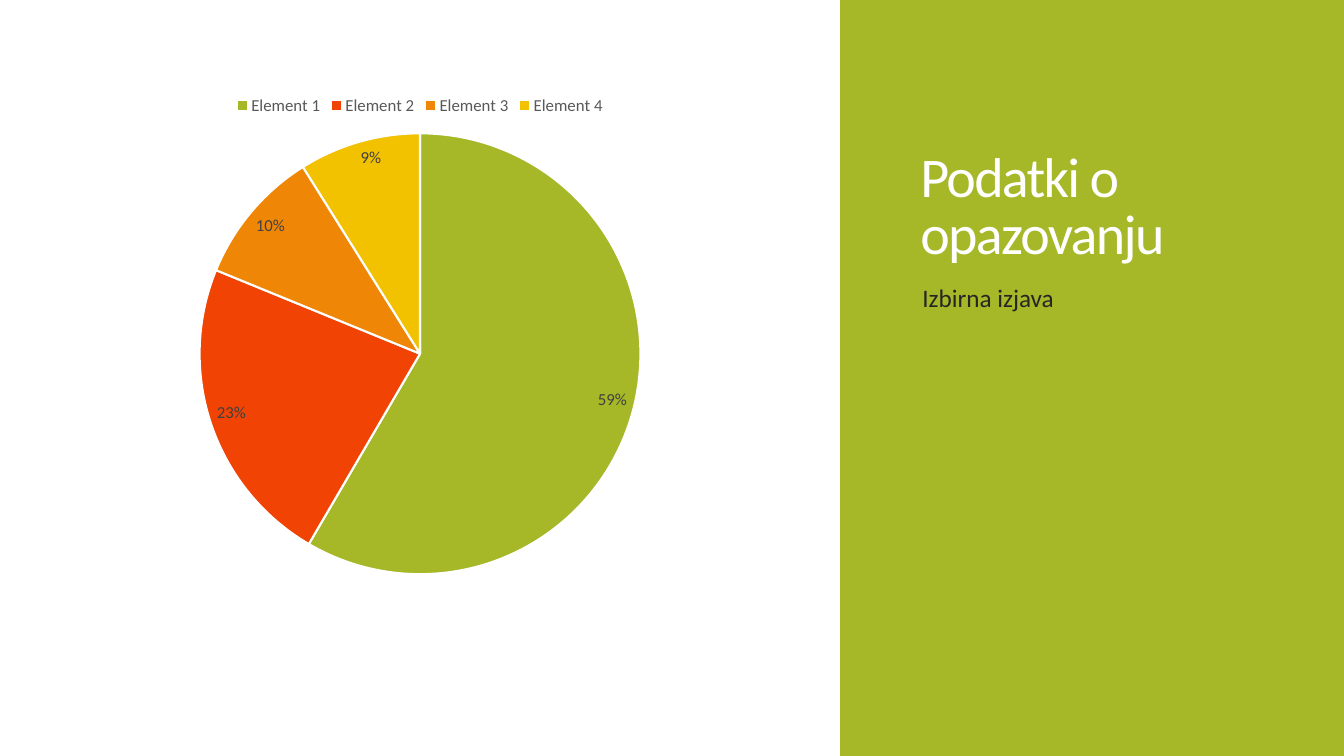
from pptx import Presentation
from pptx.chart.data import CategoryChartData
from pptx.dml.color import RGBColor
from pptx.enum.chart import XL_CHART_TYPE as ChartType
from pptx.enum.chart import XL_LABEL_POSITION as LabelPosition
from pptx.enum.chart import XL_LEGEND_POSITION as LegendPosition
from pptx.enum.shapes import MSO_SHAPE as Shape
from pptx.enum.text import MSO_ANCHOR as Anchor
from pptx.enum.text import MSO_AUTO_SIZE as AutoSize
from pptx.enum.text import PP_ALIGN as Align
from pptx.util import Cm, Pt

# Content
TITLE = "Podatki o opazovanju"
STATEMENT = "Izbirna izjava"
SERIES_NAME = "Series 1"
SHARES = {"Element 1": 59, "Element 2": 23, "Element 3": 10, "Element 4": 9}

# Style
FONT = "Calibri"
WHITE = RGBColor(0xFF, 0xFF, 0xFF)
GREEN = RGBColor(0xA6, 0xB7, 0x27)
RED = RGBColor(0xF0, 0x43, 0x04)
ORANGE = RGBColor(0xEF, 0x86, 0x06)
YELLOW = RGBColor(0xF2, 0xC1, 0x00)
STATEMENT_COLOR = RGBColor(0x26, 0x26, 0x26)
LABEL_COLOR = RGBColor(0x40, 0x40, 0x40)
LEGEND_COLOR = RGBColor(0x59, 0x59, 0x59)
SLICE_COLORS = [GREEN, RED, ORANGE, YELLOW]

# Layout: left, top, width, height
SLIDE_WIDTH, SLIDE_HEIGHT = Cm(33.87), Cm(19.05)
PANEL_WIDTH = Cm(12.7)
TITLE_BOX = (Cm(22.94), Cm(1.5), Cm(9.4), Cm(5.33))
STATEMENT_BOX = (Cm(22.99), Cm(6.99), Cm(9.45), Cm(8.69))
CHART_BOX = (Cm(2.12), Cm(2.12), Cm(16.93), Cm(12.7))


def format_font(font, size, color):
    font.name = FONT
    font.size = Pt(size)
    font.bold = False
    font.color.rgb = color


def fill_placeholder(placeholder, text, box, anchor, size, color):
    placeholder.left, placeholder.top, placeholder.width, placeholder.height = box
    frame = placeholder.text_frame
    frame.text = text
    frame.word_wrap = True
    frame.auto_size = AutoSize.NONE
    frame.vertical_anchor = anchor
    paragraph = frame.paragraphs[0]
    paragraph.alignment = Align.LEFT
    format_font(paragraph.runs[0].font, size, color)
    return paragraph


presentation = Presentation()
presentation.slide_width = SLIDE_WIDTH
presentation.slide_height = SLIDE_HEIGHT
slide = presentation.slides.add_slide(
    presentation.slide_layouts.get_by_name("Content with Caption"))
title, content, statement = slide.placeholders
content.element.getparent().remove(content.element)

# Green panel, sent behind the text
panel = slide.shapes.add_shape(
    Shape.RECTANGLE, SLIDE_WIDTH - PANEL_WIDTH, 0, PANEL_WIDTH, SLIDE_HEIGHT)
panel.shadow.inherit = False
panel.fill.solid()
panel.fill.fore_color.rgb = GREEN
panel.line.fill.background()
title.element.addprevious(panel.element)

# Title and statement
paragraph = fill_placeholder(title, TITLE, TITLE_BOX, Anchor.BOTTOM, 40, WHITE)
paragraph.line_spacing = 0.85
paragraph.runs[0].font._element.set("spc", "-120")
paragraph = fill_placeholder(
    statement, STATEMENT, STATEMENT_BOX, Anchor.TOP, 18, STATEMENT_COLOR)
paragraph.space_before = Pt(14)

# Pie chart
chart_data = CategoryChartData()
chart_data.categories = list(SHARES)
chart_data.add_series(SERIES_NAME, list(SHARES.values()))
chart = slide.shapes.add_chart(ChartType.PIE, *CHART_BOX, chart_data).chart
format_font(chart.font, 12, LABEL_COLOR)
chart.has_title = False
chart.has_legend = True
chart.legend.position = LegendPosition.TOP
chart.legend.include_in_layout = False
format_font(chart.legend.font, 12, LEGEND_COLOR)

plot = chart.plots[0]
plot.vary_by_categories = True
for index, color in enumerate(SLICE_COLORS):
    slice_format = plot.series[0].points[index].format
    slice_format.fill.solid()
    slice_format.fill.fore_color.rgb = color
    slice_format.line.color.rgb = WHITE
    slice_format.line.width = Pt(1.5)

# Slice labels
plot.has_data_labels = True
labels = plot.data_labels
labels.show_value = True
labels.number_format = '0"%"'
labels.number_format_is_linked = False
labels.position = LabelPosition.INSIDE_END
format_font(labels.font, 12, LABEL_COLOR)

presentation.save("out.pptx")
